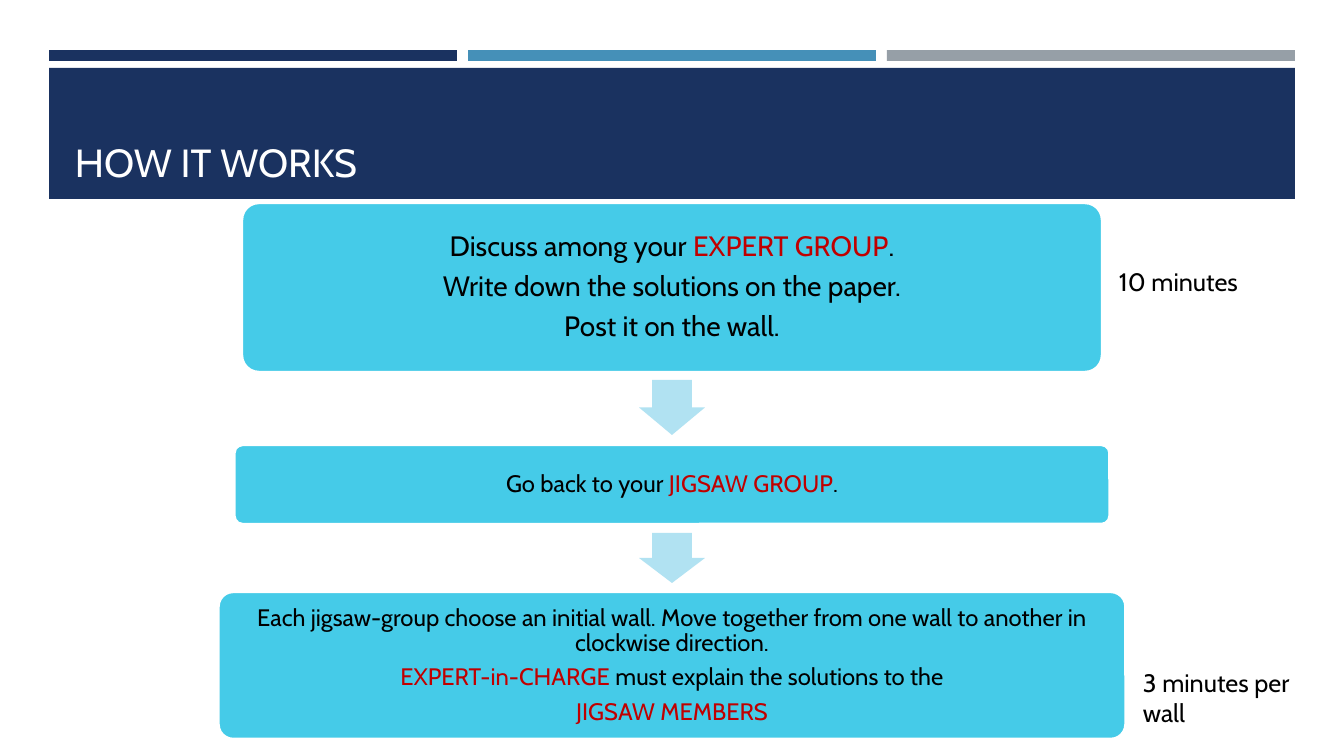
from pptx import Presentation
from pptx import util as u
from pptx.dml import color
from pptx.enum import shapes, text

PX = 914400 / 100.8
NAVY, CYAN, PALE = "1A3260", "45CBE8", "B1E2F2"
BLACK, RED, WHITE = "000000", "C00000", "FFFFFF"
KIND = shapes.MSO_SHAPE


def add_block(kind, left, top, width, height, fill, line=None):
    block = page.shapes.add_shape(
        kind, *(u.Emu(round(v * PX)) for v in (left, top, width, height)))
    block.shadow.inherit = False
    block.fill.solid()
    block.fill.fore_color.rgb = color.RGBColor.from_string(fill)
    if line:
        block.line.color.rgb = color.RGBColor.from_string(line)
        block.line.width = u.Pt(1.75)
    else:
        block.line.fill.background()
    return block


def add_span(para, words, size, ink):
    span = para.add_run()
    span.text = words
    span.font.name = "Cabin"
    span.font.size = u.Pt(size)
    span.font.color.rgb = color.RGBColor.from_string(ink)


deck = Presentation()
deck.slide_width, deck.slide_height = (u.Emu(round(v * PX)) for v in (1344, 756))
page = deck.slides.add_slide(deck.slide_layouts[6])

# Header stripes and title band
for i, fill in enumerate((NAVY, "4590B8", "969FA7")):
    add_block(KIND.RECTANGLE, 49 + 419 * i, 50, 408, 11, fill)
add_block(KIND.RECTANGLE, 49, 68, 1246, 131, NAVY)

# Title and time labels
labels = [
    (65, 78, 1216, 112, "HOW IT WORKS", 28, WHITE, text.MSO_ANCHOR.BOTTOM),
    (1109, 261, 155, 40, "10 minutes", 18, BLACK, text.MSO_ANCHOR.TOP),
    (1133, 662, 200, 71, "3 minutes per wall", 18, BLACK, text.MSO_ANCHOR.TOP),
]
for left, top, width, height, words, size, ink, anchor in labels:
    box = page.shapes.add_textbox(
        *(u.Emu(round(v * PX)) for v in (left, top, width, height)))
    box.text_frame.word_wrap = True
    box.text_frame.vertical_anchor = anchor
    add_span(box.text_frame.paragraphs[0], words, size, ink)

# Steps: top, width, height, text size, paragraphs of (words, colour)
steps = [
    (203, 860, 169, 20, [
        [("Discuss among your ", BLACK), ("EXPERT GROUP", RED), (".", BLACK)],
        [("Write down the solutions on the paper.", BLACK)],
        [("Post it on the wall.", BLACK)]]),
    (445, 875, 79, 17, [
        [("Go back to your ", BLACK), ("JIGSAW GROUP", RED), (".", BLACK)]]),
    (592, 907, 147, 17, [
        [("Each jigsaw-group choose an initial wall. Move together from one "
          "wall to another in clockwise direction.", BLACK)],
        [("EXPERT-in-CHARGE ", RED), ("must explain the solutions to the", BLACK)],
        [("JIGSAW MEMBERS", RED)]]),
]
for top, width, height, size, paragraphs in steps:
    step = add_block(KIND.ROUNDED_RECTANGLE, 672 - width / 2, top, width, height,
                     CYAN, WHITE)
    step.adjustments[0] = 0.1
    frame = step.text_frame
    frame.word_wrap = True
    frame.vertical_anchor = text.MSO_ANCHOR.MIDDLE
    frame.margin_left = frame.margin_right = u.Emu(round(8 * PX))
    frame.margin_top = frame.margin_bottom = u.Emu(round(8 * PX))
    for i, spans in enumerate(paragraphs):
        para = frame.add_paragraph() if i else frame.paragraphs[0]
        para.alignment = text.PP_ALIGN.CENTER
        para.line_spacing = 0.9
        para.space_after = u.Pt(round(size * 0.35))
        for words, ink in spans:
            add_span(para, words, size, ink)

# Arrows between the steps
for top, height in ((380, 55), (533, 50)):
    arrow = add_block(KIND.DOWN_ARROW, 639, top, 66, height, PALE)
    arrow.adjustments[0] = 0.6
    arrow.adjustments[1] = 0.5

deck.save("out.pptx")
